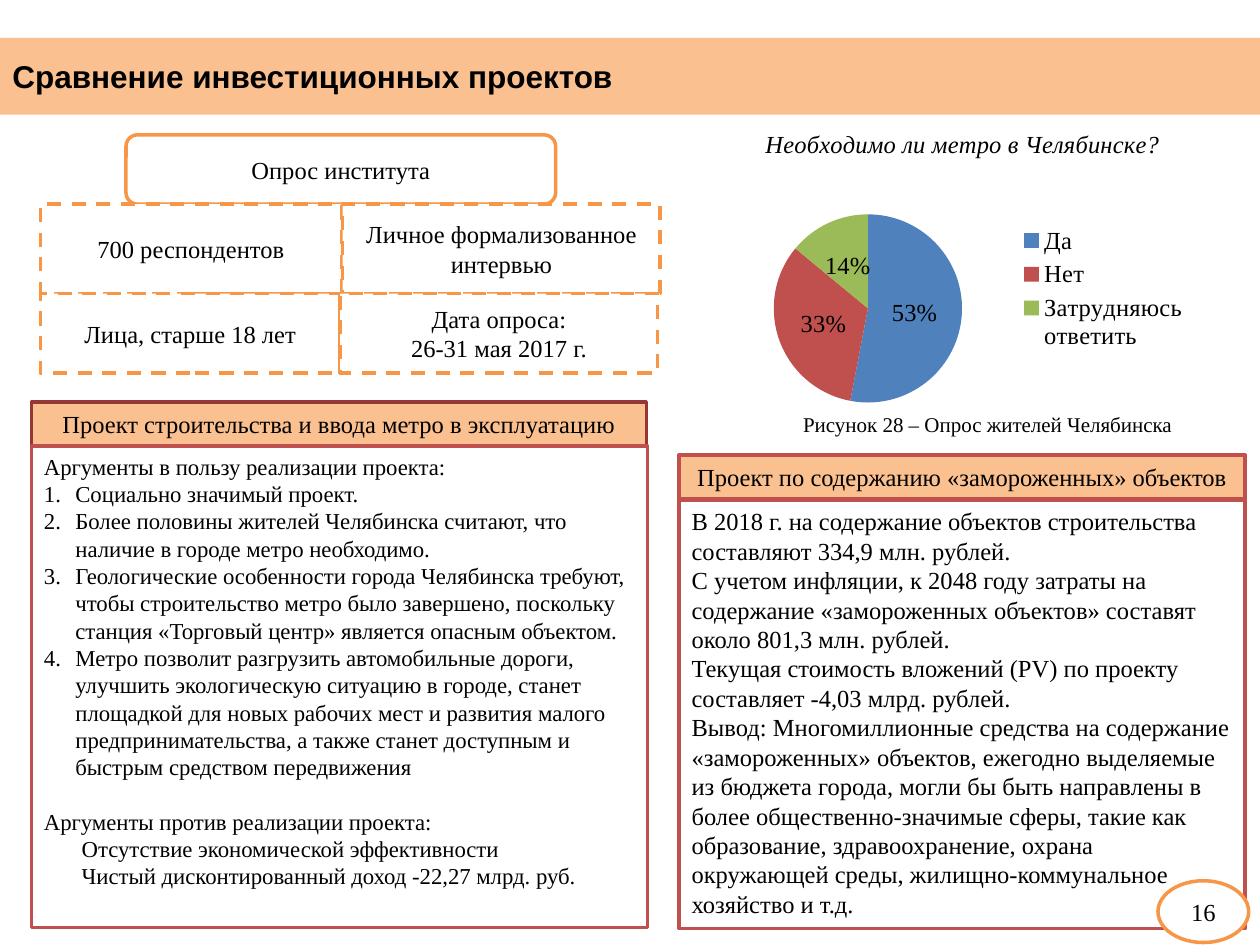
from lxml.etree import SubElement, fromstring
from pptx import Presentation
from pptx.chart.data import CategoryChartData
from pptx.dml.color import RGBColor
from pptx.enum.chart import XL_CHART_TYPE, XL_LABEL_POSITION, XL_LEGEND_POSITION
from pptx.enum.dml import MSO_LINE
from pptx.enum.shapes import MSO_SHAPE
from pptx.enum.text import MSO_ANCHOR, PP_ALIGN
from pptx.oxml.ns import nsdecls, qn
from pptx.util import Inches, Pt

PEACH, ORANGE, RED, DARK, WHITE = "FAC090", "F79646", "C0504D", "953735", "FFFFFF"
SERIF = "Times New Roman"
rgb = RGBColor.from_string


def add_box(place, lines, fill=WHITE, line=None, kind=MSO_SHAPE.RECTANGLE,
            size=14, align=PP_ALIGN.CENTER, anchor=MSO_ANCHOR.MIDDLE):
    """Add a filled shape, one paragraph per line of text."""
    box = slide.shapes.add_shape(kind, *map(Inches, place))
    box.shadow.inherit = False
    box.fill.solid()
    box.fill.fore_color.rgb = rgb(fill)
    if line:
        box.line.color.rgb = rgb(line)
        box.line.width = Pt(2)
    else:
        box.line.fill.background()
    frame = box.text_frame
    frame.word_wrap = True
    frame.vertical_anchor = anchor
    for i, text in enumerate(lines):
        para = frame.add_paragraph() if i else frame.paragraphs[0]
        para.text = text
        para.alignment = align
        para.font.size = Pt(size)
        para.font.name = SERIF
        para.font.color.rgb = rgb("000000")
    return box


def set_layout(part, index, x, y, w, h):
    """Fix a chart part's place, in fractions of the chart."""
    for old in part.findall(qn("c:layout")):
        part.remove(old)
    inner = '<c:layoutTarget val="inner"/>' if part.tag == qn("c:plotArea") else ""
    part.insert(index, fromstring(
        f'<c:layout {nsdecls("c")}><c:manualLayout>{inner}'
        '<c:xMode val="edge"/><c:yMode val="edge"/>'
        f'<c:x val="{x}"/><c:y val="{y}"/><c:w val="{w}"/><c:h val="{h}"/>'
        '</c:manualLayout></c:layout>'))


deck = Presentation()
deck.slide_width, deck.slide_height = Inches(10), Inches(7.5)
slide = deck.slides.add_slide(deck.slide_layouts[6])

# Heading
head = add_box((0, 0.3, 10, 0.61), ["Сравнение инвестиционных проектов"],
               PEACH, size=18, align=PP_ALIGN.LEFT)
font = head.text_frame.paragraphs[0].font
font.name, font.bold = "Arial", True

# Survey chart
data = CategoryChartData()
data.categories = ["Да", "Нет", "Затрудняюсь ответить"]
data.add_series("Опрос", (53, 33, 14))
chart = slide.shapes.add_chart(
    XL_CHART_TYPE.PIE, Inches(5.61), Inches(0.88), Inches(4.06), Inches(2.49), data).chart
chart.font.size, chart.font.name = Pt(14), SERIF
chart.font.color.rgb = rgb("000000")
title = chart.chart_title.text_frame.paragraphs[0]
title.text = "Необходимо ли метро в Челябинске?"
title.font.size, title.font.name = Pt(14), SERIF
title.font.bold, title.font.italic = False, True
chart.has_legend = True
chart.legend.position = XL_LEGEND_POSITION.RIGHT
chart.legend.include_in_layout = False
plot = chart.plots[0]
plot.vary_by_categories = True
for i, color in enumerate(("4F81BD", RED, "9BBB59")):
    fill = plot.series[0].points[i].format.fill
    fill.solid()
    fill.fore_color.rgb = rgb(color)
plot.has_data_labels = True
labels = plot.data_labels
labels.show_percentage, labels.show_value = True, False
labels.number_format, labels.number_format_is_linked = "0%", False
labels.position = XL_LABEL_POSITION.CENTER
labels.font.size, labels.font.name = Pt(14), SERIF
area = chart.element.find(".//" + qn("c:plotArea"))
key = chart.element.find(".//" + qn("c:legend"))
set_layout(area, 0, 0.13, 0.33, 0.37, 0.6)
set_layout(key, 1, 0.6, 0.35, 0.35, 0.43)

note = slide.shapes.add_textbox(Inches(6.26), Inches(3.22), Inches(3.16), Inches(0.3))
note.text_frame.word_wrap = False
para = note.text_frame.paragraphs[0]
para.text = "Рисунок 28 – Опрос жителей Челябинска"
para.alignment = PP_ALIGN.CENTER
para.font.size, para.font.name = Pt(12), SERIF
para.font.color.rgb = rgb("000000")

# Survey facts
add_box((1, 1.07, 3.41, 0.55), ["Опрос института"], line=ORANGE,
        kind=MSO_SHAPE.ROUNDED_RECTANGLE)
facts = [
    ((0.32, 1.62, 2.39, 0.71), ["700 респондентов"]),
    ((0.32, 2.33, 2.38, 0.63), ["Лица, старше 18 лет"]),
    ((2.72, 1.62, 2.52, 0.71), ["Личное формализованное интервью"]),
    ((2.7, 2.33, 2.52, 0.63), ["Дата опроса:", "26-31 мая 2017 г."]),
]
for place, lines in facts:
    add_box(place, lines, line=ORANGE).line.dash_style = MSO_LINE.DASH

# Two projects
add_box((0.25, 3.19, 4.88, 0.35),
        ["Проект строительства и ввода метро в эксплуатацию"], PEACH, DARK)
add_box((5.39, 3.61, 4.49, 0.35),
        ["Проект по содержанию «замороженных» объектов"], PEACH, RED)

pros = [
    "Социально значимый проект.",
    "Более половины жителей Челябинска считают, что наличие в городе метро необходимо.",
    "Геологические особенности города Челябинска требуют, чтобы строительство метро "
    "было завершено, поскольку станция «Торговый центр» является опасным объектом.",
    "Метро позволит разгрузить автомобильные дороги, улучшить экологическую ситуацию "
    "в городе, станет площадкой для новых рабочих мест и развития малого "
    "предпринимательства, а также станет доступным и быстрым средством передвижения",
]
cons = [
    "Отсутствие экономической эффективности",
    "Чистый дисконтированный доход -22,27 млрд. руб.",
]
build = add_box(
    (0.25, 3.54, 4.89, 3.82),
    ["Аргументы в пользу реализации проекта:", *pros,
     "Аргументы против реализации проекта:", *cons],
    line=RED, size=13, align=PP_ALIGN.LEFT, anchor=MSO_ANCHOR.TOP)
paras = build.text_frame.paragraphs
split = len(pros) + 1
for para in paras[1:split]:
    props = para._p.get_or_add_pPr()
    props.set("marL", str(Inches(0.25)))
    props.set("indent", str(-Inches(0.25)))
    mark = SubElement(props, qn("a:buAutoNum"), type="arabicPeriod")
    props.remove(mark)
    props.insert_element_before(mark, "a:tabLst", "a:defRPr", "a:extLst")
paras[split].space_before = Pt(15.5)
for para in paras[split + 1:]:
    para._p.get_or_add_pPr().set("marL", str(Inches(0.3)))

add_box((5.39, 3.97, 4.49, 3.4), [
    "В 2018 г. на содержание объектов строительства составляют 334,9 млн. рублей.",
    "С учетом инфляции, к 2048 году затраты на содержание «замороженных объектов» "
    "составят около 801,3 млн. рублей.",
    "Текущая стоимость вложений (PV) по проекту составляет -4,03 млрд. рублей.",
    "Вывод: Многомиллионные средства на содержание «замороженных» объектов, ежегодно "
    "выделяемые из бюджета города, могли бы быть направлены в более "
    "общественно-значимые сферы, такие как образование, здравоохранение, охрана "
    "окружающей среды, жилищно-коммунальное хозяйство и т.д.",
], line=RED, align=PP_ALIGN.LEFT, anchor=MSO_ANCHOR.TOP)

# Page number
add_box((9.19, 6.99, 0.72, 0.49), ["16"], line=ORANGE, kind=MSO_SHAPE.OVAL)

deck.save("out.pptx")
